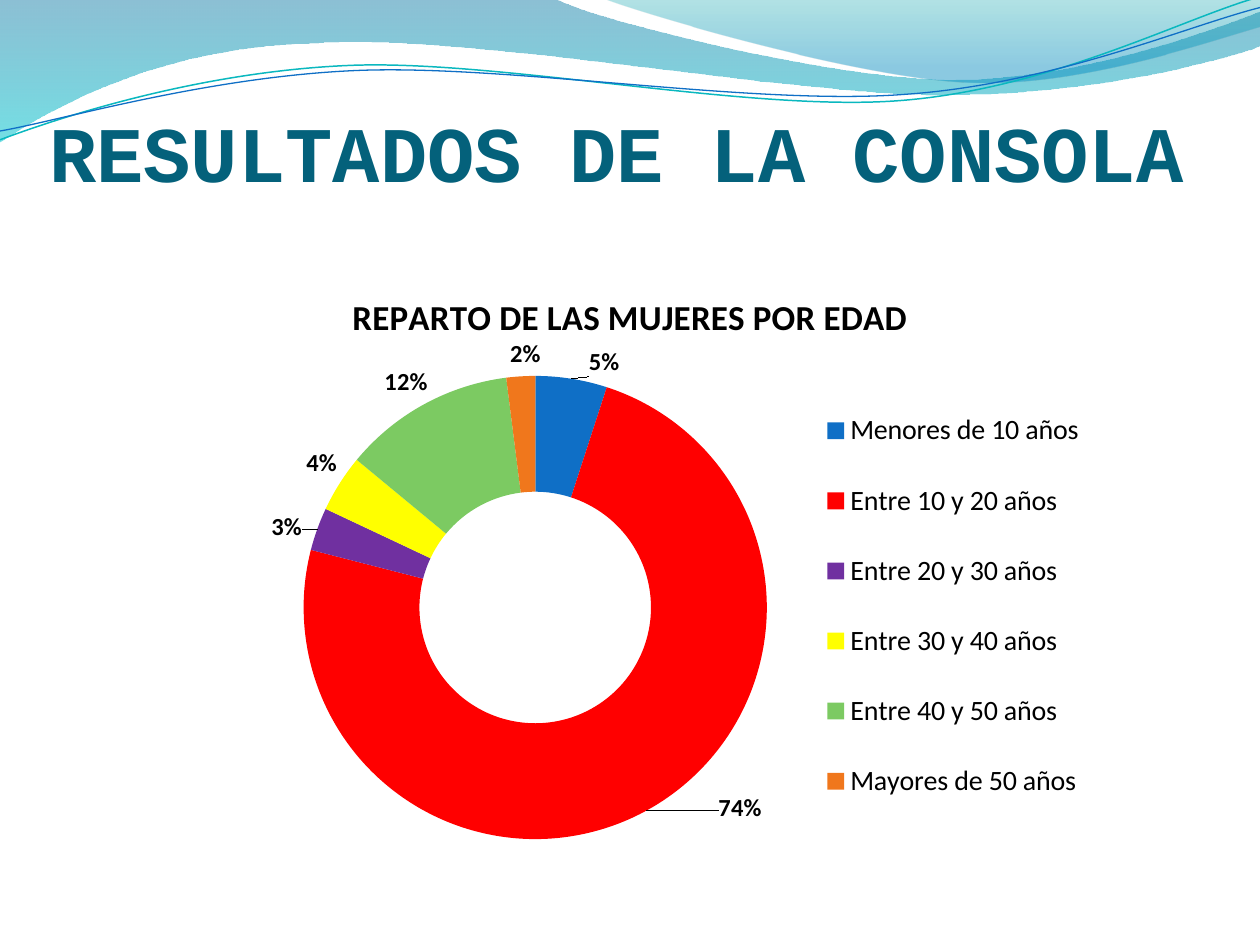
"""Build the slide with the ring chart of women by age group."""
from lxml import etree
from pptx import Presentation
from pptx.chart.data import CategoryChartData
from pptx.dml.color import RGBColor
from pptx.enum.chart import XL_CHART_TYPE, XL_LEGEND_POSITION
from pptx.enum.text import MSO_ANCHOR
from pptx.oxml.ns import qn
from pptx.util import Cm, Pt

DOUGHNUT = XL_CHART_TYPE.DOUGHNUT
RIGHT = XL_LEGEND_POSITION.RIGHT
BOTTOM = MSO_ANCHOR.BOTTOM

LEFT_WAVE = [(0, 0), (4.4, -0.01),
             (4.76, 0.17, 6.64, 0.63, 7.58, 0.63), (8.53, 0.63, 9.58, 0.26, 10, 0.09),
             (10.01, 0.36), (9.83, 0.44, 8.7, 0.76, 7.46, 0.75),
             (6.22, 0.75, 3.82, 0.28, 2.57, 0.34), (1.29, 0.36, 0.46, 0.83, -0.01, 1.13)]
RIGHT_WAVE = [(4.79, -0.01), (5.09, 0.11, 6.82, 0.62, 7.69, 0.65),
              (8.56, 0.69, 9.61, 0.32, 10, 0.21), (10, 0)]
TEAL_LINE = [(0, 1.11), (0.48, 0.93, 1.58, 0.57, 2.77, 0.52),
             (3.95, 0.47, 5.93, 0.89, 7.13, 0.8), (8.33, 0.71, 9.38, 0.15, 9.98, -0.02)]
BLUE_LINE = [(0, 1.04), (0.47, 0.96, 1.64, 0.61, 2.83, 0.56),
             (4.03, 0.51, 5.97, 0.84, 7.17, 0.75), (8.36, 0.67, 9.41, 0.21, 10, 0.06)]

AGE_GROUPS = [("Menores de 10 años", 5, "0F6FC6", (3.7, -12.3)),
              ("Entre 10 y 20 años", 74, "FF0000", (10.7, 7.9)),
              ("Entre 20 y 30 años", 3, "7030A0", (-7.5, -3.6)),
              ("Entre 30 y 40 años", 4, "FFFF00", (-5.9, -8.5)),
              ("Entre 40 y 50 años", 12, "7CCA62", (-4, -12.2)),
              ("Mayores de 50 años", 2, "F0771C", (0.1, -13.3))]


def inches(value):
    """Turn inches into a length."""
    return Cm(value * 2.54)


def colour(code):
    """Turn a hex string into a colour."""
    return RGBColor.from_string(code)


def format_font(font, size, name, code="000000", bold=False):
    """Set size, typeface, colour and weight of a font."""
    font.size, font.name, font.bold = Pt(size), name, bold
    font.color.rgb = colour(code)


def write(frame, text, **style):
    """Put one formatted span of text into a frame."""
    span = frame.paragraphs[0].add_run()
    span.text = text
    format_font(span.font, **style)


def bend(shape, steps):
    """Turn the straight segments of cubic steps into curves."""
    segments = list(shape._element.iter(qn("a:lnTo")))
    for segment, step in zip(segments, steps):
        if len(step) == 2:
            continue
        cubic = etree.Element(qn("a:cubicBezTo"))
        for x, y in zip(step[::2], step[1::2]):
            point = etree.SubElement(cubic, qn("a:pt"))
            point.set("x", str(inches(x) - shape.left))
            point.set("y", str(inches(y) - shape.top))
        segment.getparent().replace(segment, cubic)


def place(parent, index, inner=False, **percents):
    """Give a chart part a manual layout in percent."""
    for old in parent.findall(qn("c:layout")):
        parent.remove(old)
    layout = etree.Element(qn("c:layout"))
    manual = etree.SubElement(layout, qn("c:manualLayout"))
    entries = {"layoutTarget": "inner"} if inner else {}
    if "w" in percents:
        entries.update(xMode="edge", yMode="edge")
    entries.update((tag, str(value / 100)) for tag, value in percents.items())
    for tag, value in entries.items():
        etree.SubElement(manual, qn(f"c:{tag}")).set("val", value)
    parent.insert(index, layout)


class Slide:
    """Hold the style and the current slide."""

    title_font = "Courier New"
    chart_font = "Calibri"
    title_colour = "04617B"

    def __init__(self, deck):
        """Add a blank page to the deck."""
        self.page = deck.slides.add_slide(deck.slide_layouts[6])

    def outline(self, steps, closed):
        """Draw a curved freeform without shadow."""
        points = [tuple(map(inches, step[-2:])) for step in steps]
        builder = self.page.shapes.build_freeform(*points[0])
        builder.add_line_segments(points[1:], close=closed)
        shape = builder.convert_to_shape()
        shape.shadow.inherit = False
        bend(shape, steps[1:])
        return shape

    def wave(self, steps, stops):
        """Draw a closed shape with a see-through downward gradient."""
        shape = self.outline(steps, True)
        shape.line.fill.background()
        shape.fill.gradient()
        shape.fill.gradient_angle = 270
        elements = shape._element.spPr.iter(qn("a:gs"))
        for stop, element, (position, code, opacity) in zip(
                shape.fill.gradient_stops, list(elements), stops):
            stop.color.rgb = colour(code)
            element.set("pos", str(position * 1000))
            alpha = etree.SubElement(element[0], qn("a:alpha"))
            alpha.set("val", str(opacity * 1000))

    def curve(self, steps, code, width):
        """Draw an open curved line."""
        shape = self.outline(steps, False)
        shape.fill.background()
        shape.line.color.rgb = colour(code)
        shape.line.width = Pt(width)

    def title(self, text, *bounds):
        """Add the heading."""
        box = self.page.shapes.add_textbox(*map(inches, bounds))
        frame = box.text_frame
        frame.word_wrap = True
        frame.vertical_anchor = BOTTOM
        frame.margin_left = frame.margin_right = frame.margin_bottom = 0
        write(frame, text, size=45, name=self.title_font, code=self.title_colour, bold=True)

    def ring(self, heading, groups, *bounds):
        """Add the ring chart with title, legend and labels."""
        data = CategoryChartData()
        data.categories = [group[0] for group in groups]
        data.add_series("Series 1", [group[1] for group in groups])
        chart = self.page.shapes.add_chart(DOUGHNUT, *map(inches, bounds), data).chart
        format_font(chart.font, 10, "Cambria")
        chart.has_title = True
        write(chart.chart_title.text_frame, heading, size=20, name=self.chart_font, bold=True)
        chart.has_legend = True
        legend = chart.legend
        legend.position = RIGHT
        legend.include_in_layout = False
        format_font(legend.font, 16, self.chart_font)
        place(legend._element, 1, x=66.5, y=18.3, w=24, h=75.5)
        plot = chart.plots[0]
        plot.vary_by_categories = True
        place(plot._element.getparent(), 0, inner=True, x=21.2, y=18, w=40.9, h=76.6)
        self.label(plot.series[0], groups)

    def label(self, series, groups):
        """Colour the slices and set their percent labels."""
        labels = series.data_labels
        labels.show_percentage, labels.show_value = True, False
        format_font(labels.font, 14, self.chart_font, bold=True)
        for index, (_, _, code, _) in enumerate(groups):
            point = series.points[index]
            point.format.fill.solid()
            point.format.fill.fore_color.rgb = colour(code)
            format_font(point.data_label.font, 14, self.chart_font, bold=True)
        for element, group in zip(series._element.iter(qn("c:dLbl")), groups):
            x, y = group[3]
            place(element, 1, x=x, y=y)
            element.find(qn("c:showVal")).set("val", "0")
            element.find(qn("c:showPercent")).set("val", "1")


def main():
    """Build and save the deck."""
    deck = Presentation()
    deck.slide_width, deck.slide_height = inches(10), inches(7.5)
    slide = Slide(deck)
    slide.wave(LEFT_WAVE, [(0, "0074A1", 45), (100, "00C6CF", 55)])
    slide.wave(RIGHT_WAVE, [(0, "00A1A9", 30), (80, "008BBF", 45)])
    slide.curve(TEAL_LINE, "0AB8BF", 0.85)
    slide.curve(BLUE_LINE, "0F6FC6", 0.75)
    slide.title("RESULTADOS DE LA CONSOLA", 0.39, 0.78, 9.22, 0.79)
    slide.ring("REPARTO DE LAS MUJERES POR EDAD", AGE_GROUPS, 0.5, 2.12, 9, 4.8)
    deck.save("out.pptx")


if __name__ == "__main__":
    main()
